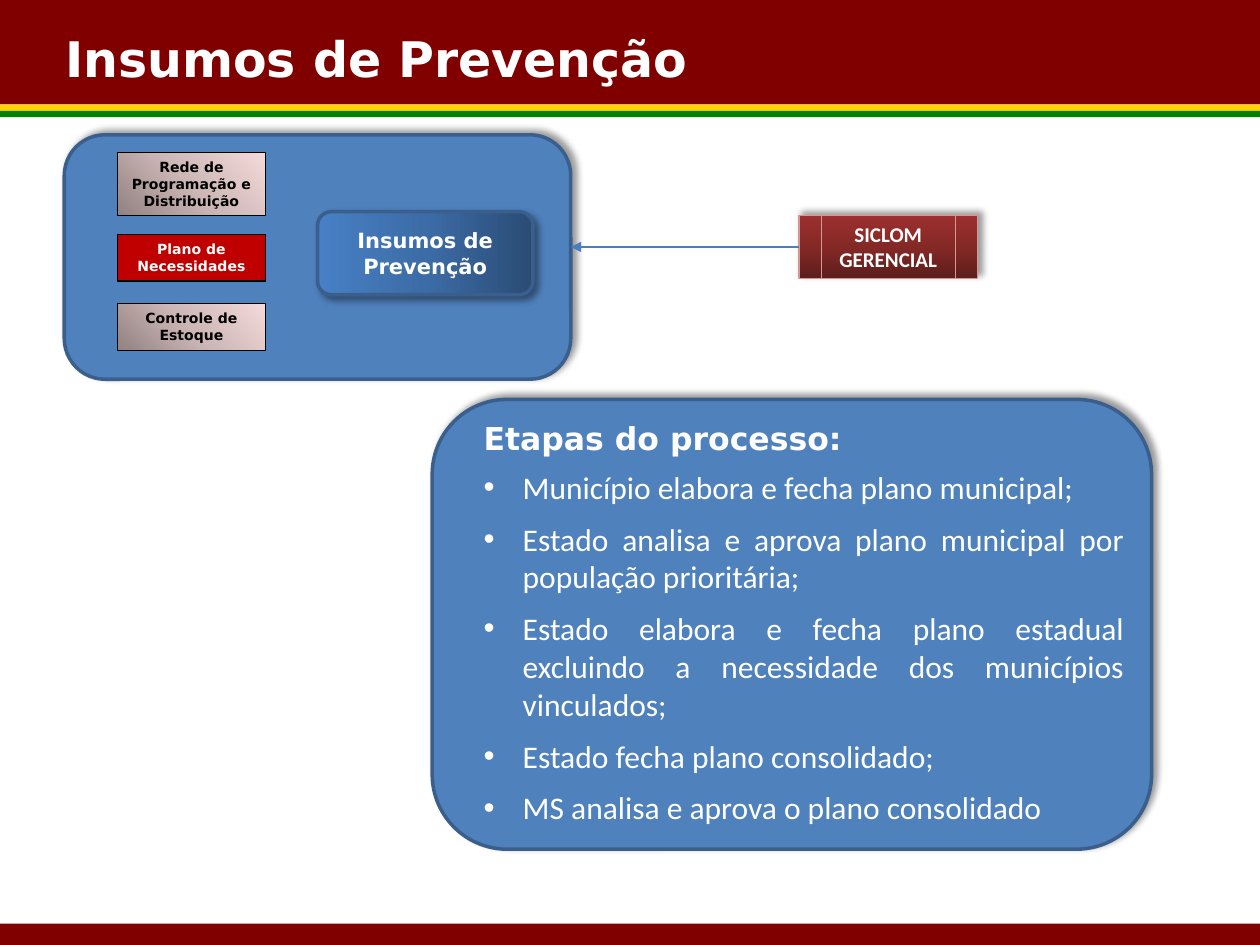
import copy

import lxml.etree
import pptx
import pptx.dml.color
import pptx.enum.shapes
import pptx.enum.text
import pptx.oxml
import pptx.oxml.ns
import pptx.util

Inches = pptx.util.Inches
Pt = pptx.util.Pt
SHAPE = pptx.enum.shapes.MSO_SHAPE
ALIGN = pptx.enum.text.PP_ALIGN
ANCHOR = pptx.enum.text.MSO_ANCHOR
AUTO_SIZE = pptx.enum.text.MSO_AUTO_SIZE
qn = pptx.oxml.ns.qn

HEADING_FONT = "DejaVu Sans"
BODY_FONT = "Calibri"
WHITE = "FFFFFF"
BLACK = "000000"
MAROON = "800000"
PANEL_FILL = "4F81BD"
PANEL_LINE = "3A5F8C"
GREY_GRADIENT = ("918181", "CEB8B7", "F4DADA")
BLUE_GRADIENT = ("2A4C75", "3C6CA6", "4780C5")
RED_GRADIENT = ("5D1D1B", "842926", "9C302E")
STEPS = (
    "Município elabora e fecha plano municipal;",
    "Estado analisa e aprova plano municipal por população prioritária;",
    "Estado elabora e fecha plano estadual excluindo a necessidade dos municípios vinculados;",
    "Estado fecha plano consolidado;",
    "MS analisa e aprova o plano consolidado",
)


def color(value):
    """Return the RGB colour for a hex string."""
    return pptx.dml.color.RGBColor.from_string(value)


def set_gradient(shape, colors, angle):
    """Fill a shape with three evenly spaced colours, angle counter-clockwise."""
    shape.fill.gradient()
    shape.fill.gradient_angle = angle
    stop_list = shape._element.spPr.find(".//" + qn("a:gsLst"))
    stop_list.append(copy.deepcopy(stop_list[-1]))
    for index, (stop, value) in enumerate(zip(shape.fill.gradient_stops, colors)):
        stop.position = index / 2
        stop.color.rgb = color(value)


def add_shadow(shape, direction):
    """Give a shape a soft black shadow in a direction in degrees."""
    effects = shape._element.spPr.find(qn("a:effectLst"))
    shadow = lxml.etree.SubElement(
        effects, qn("a:outerShdw"), blurRad=str(Pt(4)), dist=str(Pt(3)),
        dir=str(direction * 60000), algn="tl", rotWithShape="0")
    black = lxml.etree.SubElement(shadow, qn("a:srgbClr"), val=BLACK)
    lxml.etree.SubElement(black, qn("a:alpha"), val="40000")


def add_box(slide, kind, box, fill, line=None, width=0.75, angle=0, shadow=None):
    """Add a preset shape with a plain or gradient fill."""
    shape = slide.shapes.add_shape(kind, *map(Inches, box))
    shape.shadow.inherit = False
    if isinstance(fill, str):
        shape.fill.solid()
        shape.fill.fore_color.rgb = color(fill)
    else:
        set_gradient(shape, fill, angle)
    if line:
        shape.line.color.rgb = color(line)
        shape.line.width = Pt(width)
    else:
        shape.line.fill.background()
    if shadow is not None:
        add_shadow(shape, shadow)
    return shape


def style(paragraph, size, font=HEADING_FONT, value=WHITE, bold=True):
    """Set the font of a paragraph's runs."""
    for run in paragraph.runs:
        run.font.size = Pt(size)
        run.font.name = font
        run.font.bold = bold
        run.font.color.rgb = color(value)


def add_label(shape, text, size, font=HEADING_FONT, value=WHITE, anchor=ANCHOR.MIDDLE):
    """Write a centred label in a shape."""
    frame = shape.text_frame
    frame.text = text
    frame.word_wrap = True
    frame.vertical_anchor = anchor
    frame.paragraphs[0].alignment = ALIGN.CENTER
    style(frame.paragraphs[0], size, font, value)


def add_text_box(slide, box, text, size):
    """Add a wrapping text box with a bold first paragraph."""
    frame = slide.shapes.add_textbox(*map(Inches, box)).text_frame
    frame.word_wrap = True
    frame.auto_size = AUTO_SIZE.SHAPE_TO_FIT_TEXT
    frame.text = text
    style(frame.paragraphs[0], size)
    return frame


def add_panel(slide, box):
    """Add a rounded blue panel."""
    add_box(slide, SHAPE.ROUNDED_RECTANGLE, box, PANEL_FILL, PANEL_LINE, 2, shadow=315)


def add_frame(slide, left, top, width, height):
    """Draw the header and footer bands and the title."""
    bands = ((0, 0.83, MAROON), (0.83, 0.05, "FFD200"),
             (0.88, 0.05, "008000"), (height - 0.17, 0.17, MAROON))
    for offset, band_height, fill in bands:
        add_box(slide, SHAPE.RECTANGLE, (left, top + offset, width, band_height), fill)
    add_text_box(slide, (left + 0.42, top + 0.18, 8.33, 0.57), "Insumos de Prevenção", 28)


def add_modules(slide, left, top, width, height):
    """Draw the supplies panel with its three modules."""
    add_panel(slide, (left, top, width, height))
    center = add_box(slide, SHAPE.ROUNDED_RECTANGLE, (left + 2.01, top + 0.61, 1.71, 0.66),
                     BLUE_GRADIENT, PANEL_LINE, 2, 180, 45)
    add_label(center, "Insumos de Prevenção", 12)
    modules = (
        ("Rede de Programação e Distribuição", 0.14, 0.5, GREY_GRADIENT, BLACK),
        ("Plano de Necessidades", 0.79, 0.37, "C00000", WHITE),
        ("Controle de Estoque", 1.34, 0.37, GREY_GRADIENT, BLACK),
    )
    for text, offset, module_height, fill, value in modules:
        module = add_box(slide, SHAPE.RECTANGLE,
                         (left + 0.42, top + offset, 1.18, module_height),
                         fill, BLACK, angle=45)
        add_label(module, text, 8, value=value, anchor=ANCHOR.TOP)


def add_system(slide, left, top, width, height, target):
    """Draw the managing system and its arrow to the target edge."""
    system = add_box(slide, SHAPE.FLOWCHART_PREDEFINED_PROCESS, (left, top, width, height),
                     RED_GRADIENT, "D99694", angle=90, shadow=315)
    add_label(system, "SICLOM GERENCIAL", 12, BODY_FONT)
    middle = Inches(top + height / 2)
    arrow = slide.shapes.add_connector(pptx.enum.shapes.MSO_CONNECTOR.STRAIGHT,
                                       Inches(left), middle, Inches(target), middle)
    arrow.line.color.rgb = color("4B7EBC")
    arrow.line.width = Pt(1.5)
    lxml.etree.SubElement(arrow.line._get_or_add_ln(), qn("a:tailEnd"), type="triangle")
    lxml.etree.SubElement(arrow._element.spPr, qn("a:effectLst"))


def add_steps(slide, left, top, width, height):
    """Draw the panel that lists the steps of the process."""
    add_panel(slide, (left, top, width, height))
    frame = add_text_box(slide, (left + 0.31, top + 0.11, 5.28, 3.87), "Etapas do processo:", 18)
    frame.paragraphs[0].space_after = Pt(6)
    for step in STEPS:
        paragraph = frame.add_paragraph()
        paragraph.text = step
        paragraph.alignment = ALIGN.JUSTIFY
        if step != STEPS[-1]:
            paragraph.space_after = Pt(8)
        properties = paragraph._p.get_or_add_pPr()
        properties.set("marL", str(Inches(0.31)))
        properties.set("indent", str(Inches(-0.31)))
        lxml.etree.SubElement(properties, qn("a:buFont"), typeface="Arial")
        lxml.etree.SubElement(properties, qn("a:buChar"), char="•")
        style(paragraph, 18, BODY_FONT, bold=False)


def main():
    """Build the slide and save it."""
    presentation = pptx.Presentation()
    presentation.slide_width = Inches(10)
    presentation.slide_height = Inches(7.5)
    slide = presentation.slides.add_slide(presentation.slide_layouts[6])
    add_frame(slide, 0, 0, 10, 7.5)
    add_modules(slide, 0.51, 1.07, 4.02, 1.94)
    add_system(slide, 6.34, 1.71, 1.42, 0.5, 4.53)
    add_steps(slide, 3.43, 3.17, 5.71, 3.57)
    presentation.save("out.pptx")


if __name__ == "__main__":
    main()
